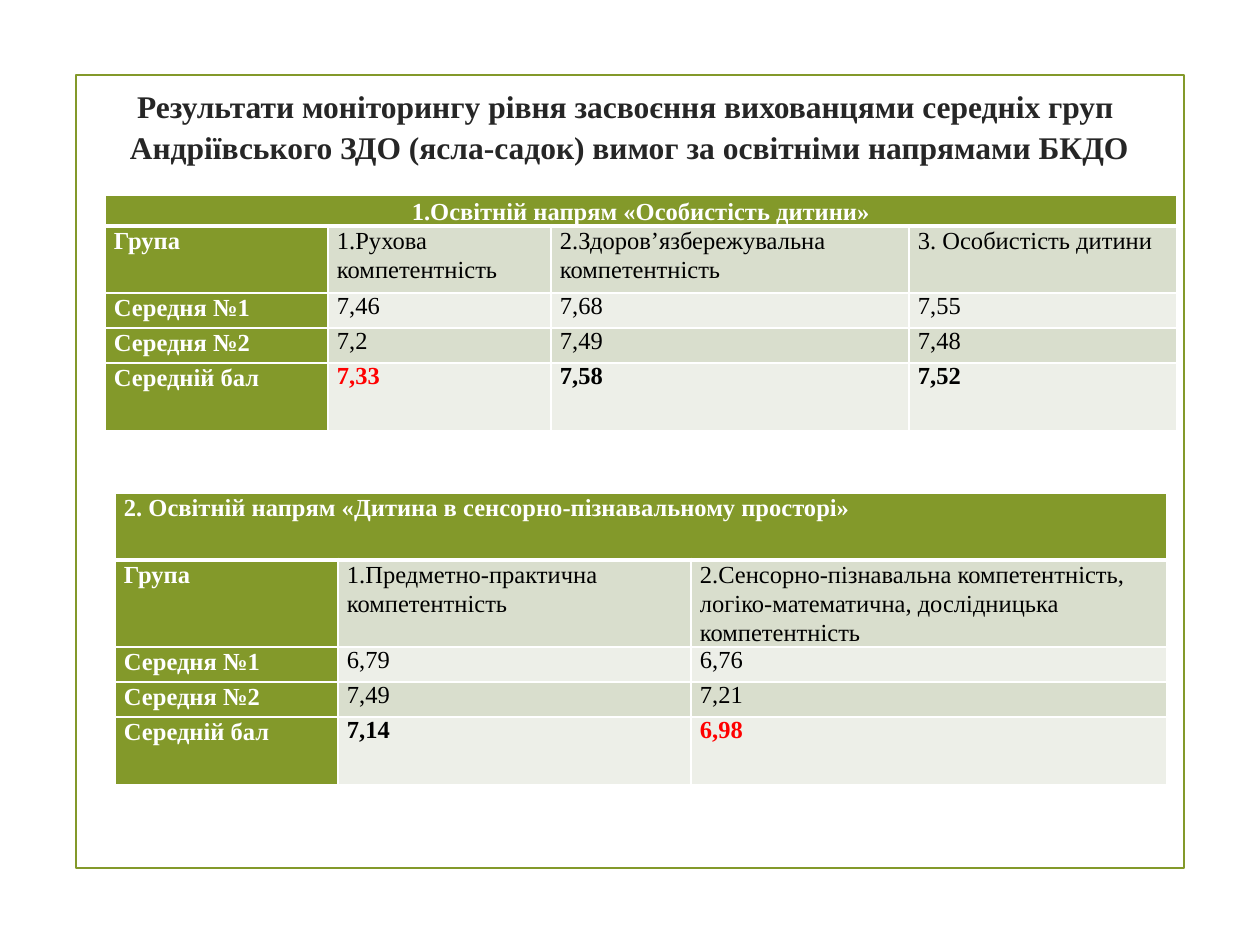
from copy import deepcopy

from pptx import Presentation
from pptx.dml.color import RGBColor
from pptx.enum.shapes import MSO_SHAPE as Shape
from pptx.enum.text import MSO_ANCHOR as Anchor, PP_ALIGN as Align
from pptx.oxml import parse_xml
from pptx.oxml.ns import nsdecls, qn
from pptx.util import Pt

SCALE = 914400 / 126
GREEN, WHITE, BLACK, RED, INK = "83992A", "FFFFFF", "000000", "FF0000", "262626"
BANDS = ["D9DECD", "EDEFE8"]
FONT = "Times New Roman"
ROW_NAMES = ["Група", "Середня №1", "Середня №2", "Середній бал"]
LOOSE = {"line_spacing": 1.07, "space_after": Pt(8)}
TIGHT = {"line_spacing": 1.0, "space_after": Pt(0)}

PERSONALITY = {
    "heading": "1.Освітній напрям «Особистість дитини»",
    "centred": True,
    "columns": [223, 223, 358, 268],
    "rows": [31, 67, 35, 35, 68],
    "values": [
        ["1.Рухова компетентність", "2.Здоров’язбережувальна компетентність",
         "3. Особистість дитини"],
        ["7,46", "7,68", "7,55"],
        ["7,2", "7,49", "7,48"],
        ["7,33", "7,58", "7,52"],
    ],
}
SENSORY = {
    "heading": "2. Освітній напрям «Дитина в сенсорно-пізнавальному просторі»",
    "centred": False,
    "columns": [223, 353, 476],
    "rows": [67, 86, 35, 35, 68],
    "values": [
        ["1.Предметно-практична компетентність",
         "2.Сенсорно-пізнавальна компетентність, логіко-математична, дослідницька компетентність"],
        ["6,79", "6,76"],
        ["7,49", "7,21"],
        ["7,14", "6,98"],
    ],
}


def px(length):
    """Turn pixels into EMU."""
    return round(length * SCALE)


def colour(value):
    """Turn a hex string into a colour."""
    return RGBColor.from_string(value)


def apply(target, values):
    """Set each named attribute on the target."""
    for name, value in values.items():
        setattr(target, name, value)


def add_span(para, text, size, tint, bold):
    """Add a formatted run to a paragraph."""
    span = para.add_run()
    span.text = text
    apply(span.font, {"name": FONT, "size": Pt(size), "bold": bold})
    span.font.color.rgb = colour(tint)
    return span


def draw_frame(page, left, top, width, height):
    """Draw the thin green frame around the page."""
    frame = page.shapes.add_shape(Shape.RECTANGLE, px(left), px(top), px(width), px(height))
    frame.shadow.inherit = False
    frame.fill.background()
    frame.line.color.rgb = colour(GREEN)
    frame.line.width = Pt(1.25)


def write_title(page, left, top, width, height):
    """Fill the title placeholder with its two lines."""
    title = page.shapes.title
    apply(title, {"left": px(left), "top": px(top), "width": px(width), "height": px(height)})
    apply(title.text_frame, {"word_wrap": True, "vertical_anchor": Anchor.MIDDLE})
    para = title.text_frame.paragraphs[0]
    apply(para, {"alignment": Align.CENTER, "space_before": Pt(0), **LOOSE})
    first = add_span(para, "Результати моніторингу рівня засвоєння вихованцями середніх груп ",
                     18, INK, True)
    para.add_line_break()
    para._p.find(qn("a:br")).append(deepcopy(first._r.rPr))
    add_span(para, "Андріївського ЗДО (ясла-садок) вимог за освітніми напрямами БКДО",
             18, INK, True)


def set_borders(cell, top, bottom):
    """Give a cell white borders with the top and bottom widths in points."""
    properties = cell._tc.get_or_add_tcPr()
    sides = {"lnL": 1, "lnR": 1, "lnT": top, "lnB": bottom}
    for place, (side, width) in enumerate(sides.items()):
        properties.insert(place, parse_xml(
            f'<a:{side} {nsdecls("a")} w="{Pt(width)}"><a:solidFill>'
            f'<a:srgbClr val="{WHITE}"/></a:solidFill></a:{side}>'))


def write_cell(cell, text, tint, bold, layout):
    """Write one paragraph into a table cell."""
    para = cell.text_frame.paragraphs[0]
    apply(para, layout)
    add_span(para, text, 14, tint, bold)


def draw_scores(page, left, top, scores):
    """Draw a score table with a merged heading, row names and values."""
    columns, rows, values = scores["columns"], scores["rows"], scores["values"]
    table = page.shapes.add_table(len(rows), len(columns), px(left), px(top),
                                  px(sum(columns)), px(sum(rows))).table
    apply(table, {"first_row": False, "horz_banding": False})
    for column, width in zip(table.columns, columns):
        column.width = px(width)
    for row, height in zip(table.rows, rows):
        row.height = px(height)
    for r, row in enumerate(table.rows):
        for c, cell in enumerate(row.cells):
            apply(cell, {"margin_left": px(9), "margin_right": px(9),
                         "margin_top": 0, "margin_bottom": 0})
            cell.fill.solid()
            cell.fill.fore_color.rgb = colour(GREEN if r == 0 or c == 0 else BANDS[(r - 1) % 2])
            set_borders(cell, 3 if r == 1 else 1, 3 if r == 0 else 1)

    heading = table.cell(0, 0)
    heading.merge(table.cell(0, len(columns) - 1))
    layout = LOOSE
    if scores["centred"]:
        heading.vertical_anchor = Anchor.MIDDLE
        layout = {**LOOSE, "line_spacing": 1.15, "alignment": Align.CENTER}
    write_cell(heading, scores["heading"], WHITE, True, layout)

    lowest = min(values[-1])
    for r, (name, line) in enumerate(zip(ROW_NAMES, values), 1):
        write_cell(table.cell(r, 0), name, WHITE, True, LOOSE)
        is_mean = r == len(values)
        for c, text in enumerate(line, 1):
            tint = RED if is_mean and text == lowest else BLACK
            write_cell(table.cell(r, c), text, tint, is_mean, LOOSE if r == 1 else TIGHT)


def main():
    """Build the slide and save it."""
    deck = Presentation()
    apply(deck, {"slide_width": px(1260), "slide_height": px(945)})
    page = deck.slides.add_slide(deck.slide_layouts[5])
    draw_frame(page, 76, 75, 1108, 793)
    write_title(page, 74, 66, 1111, 118)
    draw_scores(page, 105, 195, PERSONALITY)
    draw_scores(page, 115, 493, SENSORY)
    deck.save("out.pptx")


if __name__ == "__main__":
    main()
